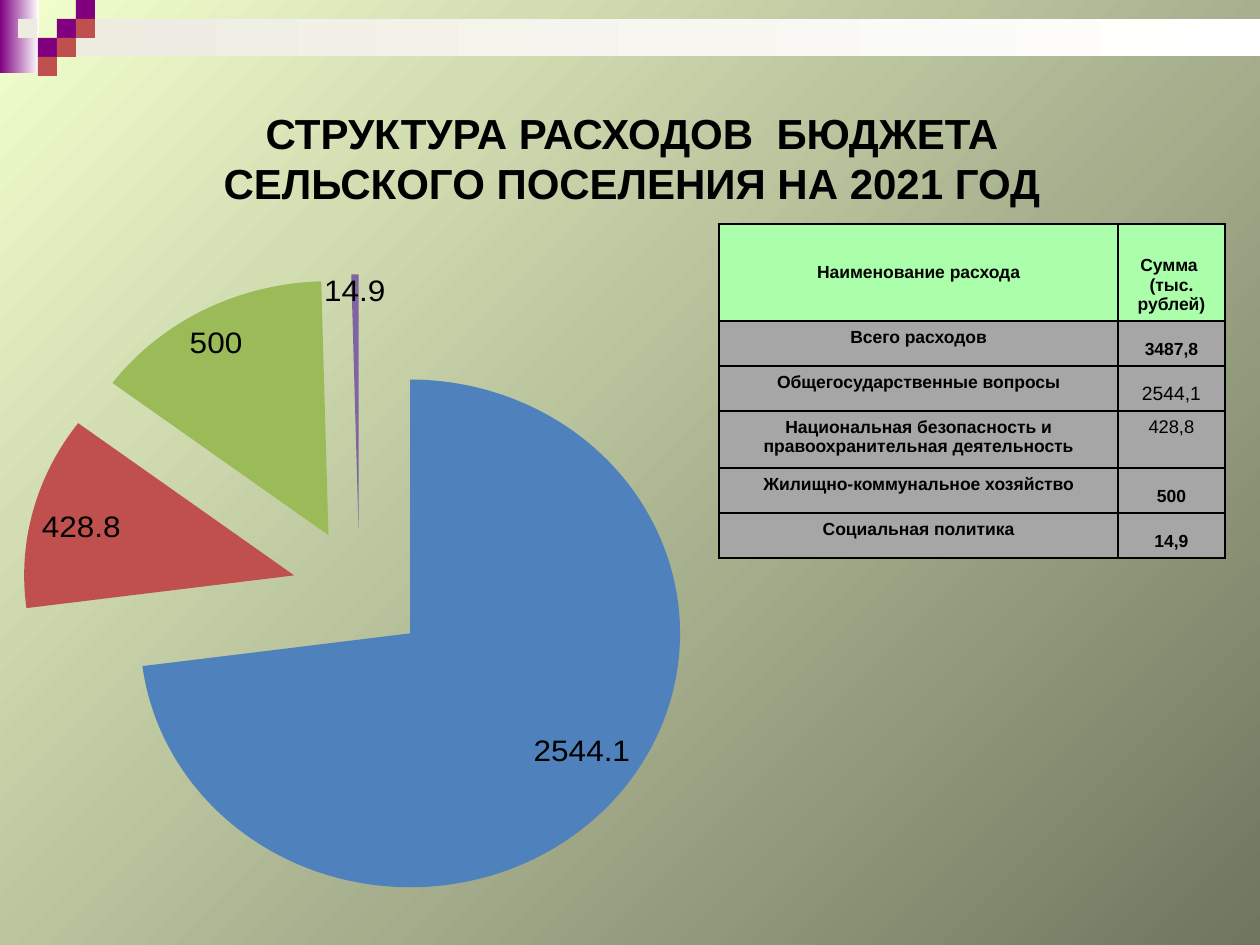
from lxml.etree import SubElement
from pptx import Presentation
from pptx.chart.data import CategoryChartData
from pptx.dml.color import RGBColor
from pptx.enum.chart import XL_CHART_TYPE as CT, XL_LABEL_POSITION as LP
from pptx.enum.shapes import MSO_SHAPE as SHAPE
from pptx.enum.text import MSO_ANCHOR as ANCHOR, PP_ALIGN as ALIGN
from pptx.oxml import parse_xml
from pptx.oxml.ns import nsdecls, qn
from pptx.util import Emu, Pt

BLACK = RGBColor(0x00, 0x00, 0x00)
WHITE = RGBColor(0xFF, 0xFF, 0xFF)
PURPLE = RGBColor(0x80, 0x00, 0x80)
RED = RGBColor(0xC0, 0x50, 0x4D)
CREAM = RGBColor(0xEE, 0xEC, 0xE1)
BG_LIGHT = RGBColor(0xF2, 0xFF, 0xCD)
BG_DARK = RGBColor(0x70, 0x76, 0x5F)
HEAD_GREEN = RGBColor(0xAB, 0xFF, 0xAB)
BODY_GRAY = RGBColor(0xA6, 0xA6, 0xA6)
SLICES = [RGBColor(0x4F, 0x81, 0xBD), RED,
          RGBColor(0x9B, 0xBB, 0x59), RGBColor(0x80, 0x64, 0xA2)]
FONT = "Arial"

HEADER = ("Наименование расхода", "Сумма  (тыс. рублей)")
EXPENSES = [
    ("Всего расходов", "3487,8", 10, True, ANCHOR.BOTTOM),
    ("Общегосударственные вопросы", "2544,1", 11, False, ANCHOR.BOTTOM),
    ("Национальная безопасность и правоохранительная деятельность",
     "428,8", 10.5, False, ANCHOR.TOP),
    ("Жилищно-коммунальное хозяйство", "500", 10, True, ANCHOR.BOTTOM),
    ("Социальная политика", "14,9", 10, True, ANCHOR.BOTTOM),
]


def px(n):
    return Emu(round(n * 914400 / 126))


def set_gradient(fill, first, last, angle):
    fill.gradient()
    fill.gradient_angle = angle
    for stop, color in zip(fill.gradient_stops, (first, last)):
        stop.color.rgb = color


def set_font(font, size, bold=False):
    font.name = FONT
    font.size = Pt(size)
    font.bold = bold
    font.color.rgb = BLACK


def add_rect(s, x, y, w, h, color, end_color=None):
    sp = s.shapes.add_shape(SHAPE.RECTANGLE, px(x), px(y), px(w), px(h))
    sp.shadow.inherit = False
    sp.line.fill.background()
    if end_color is None:
        sp.fill.solid()
        sp.fill.fore_color.rgb = color
    else:
        set_gradient(sp.fill, color, end_color, 0)


def add_ornament(s, x, y, w):
    size = 19
    add_rect(s, x, y, 39, 73, PURPLE, WHITE)
    add_rect(s, x + 57, y + size, w - 57, 37, CREAM, WHITE)
    add_rect(s, x + 18, y + size, size, size, CREAM)
    for step in range(3):
        left, top = x + 38 + step * size, y + (2 - step) * size
        add_rect(s, left, top, size, size, PURPLE)
        add_rect(s, left, top + size, size, size, RED)


def add_title(s, x, y, w, h):
    title = s.shapes.title
    title.left, title.top, title.width, title.height = map(px, (x, y, w, h))
    tf = title.text_frame
    tf.word_wrap = True
    tf.margin_left = tf.margin_right = tf.margin_top = tf.margin_bottom = 0
    tf.vertical_anchor = ANCHOR.BOTTOM
    tf.text = "СТРУКТУРА РАСХОДОВ  БЮДЖЕТА СЕЛЬСКОГО ПОСЕЛЕНИЯ НА 2021 ГОД"
    p = tf.paragraphs[0]
    p.alignment = ALIGN.CENTER
    set_font(p.runs[0].font, 24, True)


def set_borders(cell):
    tc_pr = cell._tc.get_or_add_tcPr()
    for i, side in enumerate(("lnL", "lnR", "lnT", "lnB")):
        ln = parse_xml(f'<a:{side} {nsdecls("a")} w="12700"><a:solidFill>'
                       f'<a:srgbClr val="{BLACK}"/></a:solidFill></a:{side}>')
        tc_pr.insert(i, ln)


def fill_cell(cell, text, color, anchor, size=10, bold=True):
    cell.text = text
    cell.vertical_anchor = anchor
    cell.fill.solid()
    cell.fill.fore_color.rgb = color
    set_borders(cell)
    p = cell.text_frame.paragraphs[0]
    p.alignment = ALIGN.CENTER
    set_font(p.runs[0].font, size, bold)


def add_expense_table(s, x, y, w):
    amount_w = 107
    heights = [97, 45, 45, 57, 45, 45]
    table = s.shapes.add_table(len(heights), 2, px(x), px(y),
                               px(w), px(sum(heights))).table
    for column, width in zip(table.columns, (w - amount_w, amount_w)):
        column.width = px(width)
    for row, height in zip(table.rows, heights):
        row.height = px(height)
    for col, anchor in enumerate((ANCHOR.MIDDLE, ANCHOR.BOTTOM)):
        fill_cell(table.cell(0, col), HEADER[col], HEAD_GREEN, anchor)
    for i, (name, amount, size, bold, anchor) in enumerate(EXPENSES, 1):
        fill_cell(table.cell(i, 0), name, BODY_GRAY, ANCHOR.TOP)
        fill_cell(table.cell(i, 1), amount, BODY_GRAY, anchor, size, bold)


def fill_plot_area(chart):
    area = chart._chartSpace.chart.plotArea
    for old in area.findall(qn("c:layout")):
        area.remove(old)
    layout = parse_xml(f'<c:layout {nsdecls("c")}/>')
    manual = SubElement(layout, qn("c:manualLayout"))
    for tag, val in (("layoutTarget", "inner"), ("xMode", "edge"),
                     ("yMode", "edge"), ("x", "0"), ("y", "0"),
                     ("w", "1"), ("h", "1")):
        SubElement(manual, qn(f"c:{tag}")).set("val", val)
    area.insert(0, layout)


def add_expense_pie(s, x, y, w, h):
    data = CategoryChartData()
    data.categories = ["1", "2", "3", "4"]
    data.add_series("Series 1", (2544.1, 428.8, 500, 14.9))
    chart = s.shapes.add_chart(CT.PIE_EXPLODED, px(x), px(y),
                               px(w), px(h), data).chart
    chart.has_title = False
    chart.has_legend = False
    set_font(chart.font, 18)
    plot = chart.plots[0]
    plot.vary_by_categories = True
    plot.has_data_labels = True
    labels = plot.data_labels
    labels.show_value = True
    labels.show_percentage = False
    labels.position = LP.BEST_FIT
    set_font(labels.font, 18)
    series = plot.series[0]
    for i, color in enumerate(SLICES):
        fill = series.points[i].format.fill
        fill.solid()
        fill.fore_color.rgb = color
    for explosion in series._element.findall(qn("c:explosion")):
        explosion.set("val", "25")
    fill_plot_area(chart)


def main():
    prs = Presentation()
    prs.slide_width, prs.slide_height = px(1260), px(945)
    s = prs.slides.add_slide(prs.slide_layouts[5])
    set_gradient(s.background.fill, BG_LIGHT, BG_DARK, 315)
    add_ornament(s, 0, 0, 1260)
    add_title(s, 130, 55, 1004, 153)
    add_expense_table(s, 719, 224, 506)
    add_expense_pie(s, 0, 234, 719, 675)
    prs.save("out.pptx")


if __name__ == "__main__":
    main()
